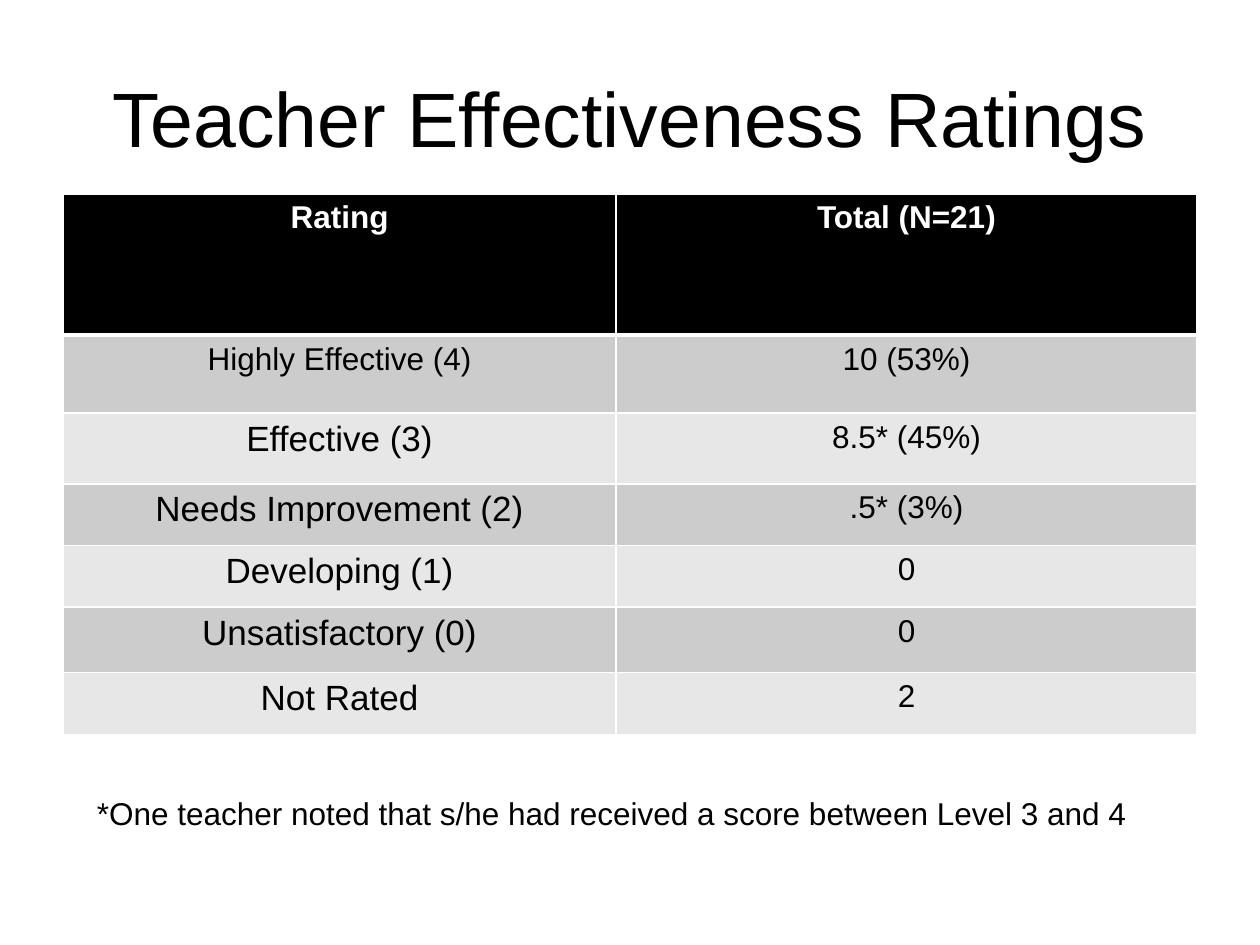
import lxml.etree
import pptx
import pptx.dml.color
import pptx.enum.text
import pptx.oxml.ns
import pptx.util
from dataclasses import dataclass
from pptx.util import Inches

TITLE = "Teacher Effectiveness Ratings"
HEADER = ("Rating", "Total (N=21)")
RATINGS = [
    ("Highly Effective (4)", "10 (53%)"),
    ("Effective (3)", "8.5* (45%)"),
    ("Needs Improvement (2)", ".5* (3%)"),
    ("Developing (1)", "0"),
    ("Unsatisfactory (0)", "0"),
    ("Not Rated", "2"),
]
FOOTNOTE = "*One teacher noted that s/he had received a score between Level 3 and 4"
COLUMN_WIDTHS = (4.39, 4.61)
ROW_HEIGHTS = (1.12, 0.62, 0.56, 0.49, 0.49, 0.52, 0.49)


@dataclass(frozen=True)
class Theme:
    font: str = "Arial"
    dark: str = "000000"
    light: str = "FFFFFF"
    bands: tuple = ("CCCCCC", "E7E7E7")
    title_size: int = 44
    label_size: int = 20
    body_size: int = 18
    thin_line: int = 1
    thick_line: int = 3


THEME = Theme()
ALIGN = pptx.enum.text.PP_ALIGN
ANCHOR = pptx.enum.text.MSO_ANCHOR


def rgb(color):
    return pptx.dml.color.RGBColor.from_string(color)


def write_text(frame, text, size=THEME.body_size, color=THEME.dark, bold=False, align=ALIGN.CENTER):
    paragraph = frame.paragraphs[0]
    paragraph.alignment = align
    run = paragraph.add_run()
    run.text = text
    run.font.name = THEME.font
    run.font.size = pptx.util.Pt(size)
    run.font.bold = bold
    run.font.color.rgb = rgb(color)


def add_text_box(slide, left, top, width, height, text, anchor=ANCHOR.TOP, **text_format):
    box = slide.shapes.add_textbox(Inches(left), Inches(top), Inches(width), Inches(height))
    box.text_frame.word_wrap = True
    box.text_frame.vertical_anchor = anchor
    write_text(box.text_frame, text, **text_format)


def set_borders(cell, **widths):
    properties = cell._tc.get_or_add_tcPr()
    for side in ("L", "R", "T", "B"):
        width = pptx.util.Pt(widths.get(side, THEME.thin_line))
        line = lxml.etree.SubElement(properties, pptx.oxml.ns.qn(f"a:ln{side}"), w=str(width))
        fill = lxml.etree.SubElement(line, pptx.oxml.ns.qn("a:solidFill"))
        lxml.etree.SubElement(fill, pptx.oxml.ns.qn("a:srgbClr"), val=THEME.light)


def format_cell(cell, text, row, column):
    if row == 0:
        fill, borders = THEME.dark, {"B": THEME.thick_line}
        text_format = {"color": THEME.light, "bold": True}
    else:
        fill = THEME.bands[(row - 1) % 2]
        borders = {"T": THEME.thick_line} if row == 1 else {}
        large = column == 0 and row > 1
        text_format = {"size": THEME.label_size if large else THEME.body_size}
    set_borders(cell, **borders)
    cell.fill.solid()
    cell.fill.fore_color.rgb = rgb(fill)
    write_text(cell.text_frame, text, **text_format)


def add_ratings_table(slide, left, top):
    rows = [HEADER, *RATINGS]
    table = slide.shapes.add_table(
        len(rows), len(HEADER), Inches(left), Inches(top),
        Inches(sum(COLUMN_WIDTHS)), Inches(sum(ROW_HEIGHTS)),
    ).table
    for column, width in zip(table.columns, COLUMN_WIDTHS):
        column.width = Inches(width)
    for row, height in zip(table.rows, ROW_HEIGHTS):
        row.height = Inches(height)
    for row_index, values in enumerate(rows):
        for column_index, text in enumerate(values):
            format_cell(table.cell(row_index, column_index), text, row_index, column_index)


def main():
    """Build the teacher effectiveness ratings slide."""
    presentation = pptx.Presentation()
    presentation.slide_width = Inches(10)
    presentation.slide_height = Inches(7.5)
    slide = presentation.slides.add_slide(presentation.slide_layouts[6])
    add_text_box(slide, 0.5, 0.3, 9, 1.25, TITLE, anchor=ANCHOR.MIDDLE, size=THEME.title_size)
    add_ratings_table(slide, 0.5, 1.54)
    add_text_box(slide, 0.67, 6.25, 8.5, 0.4, FOOTNOTE, align=ALIGN.LEFT)
    presentation.save("out.pptx")


if __name__ == "__main__":
    main()
